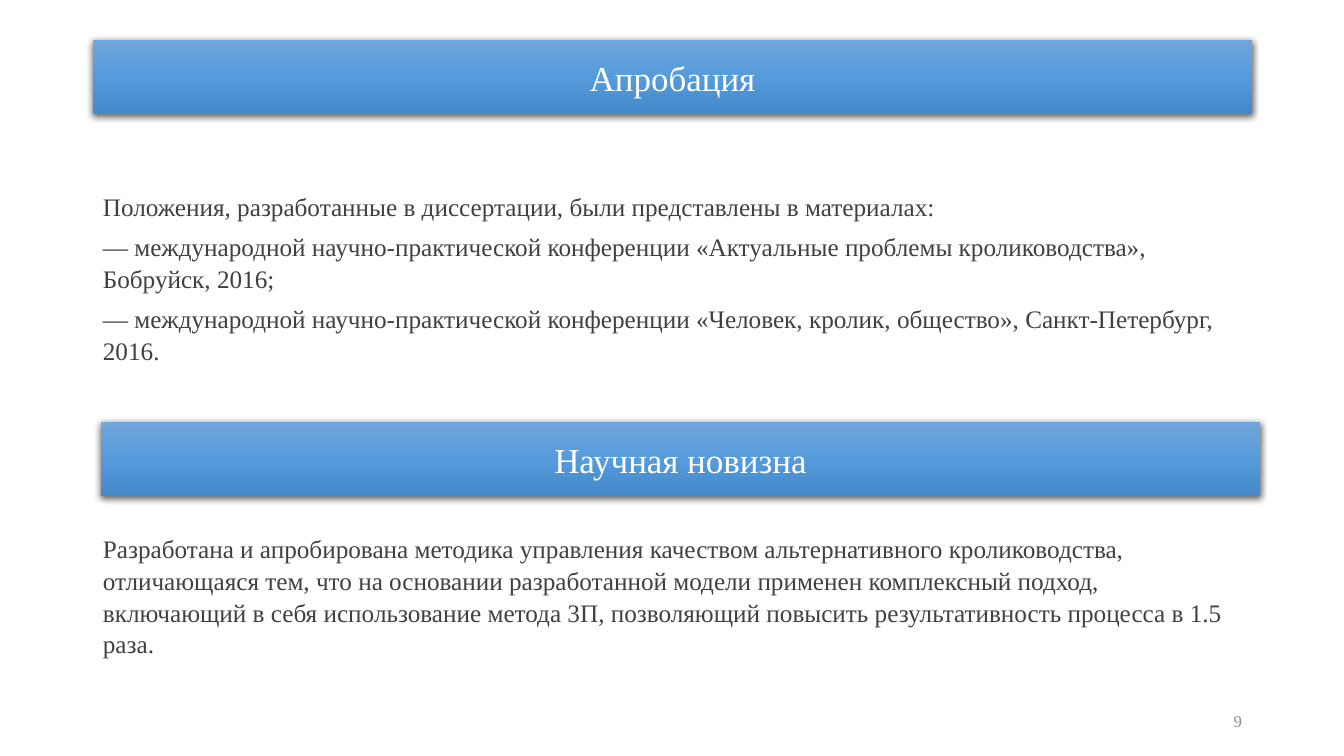
from pptx import Presentation
from pptx.dml.color import RGBColor
from pptx.enum.shapes import MSO_SHAPE
from pptx.enum.text import MSO_ANCHOR as ANCHOR, PP_ALIGN as ALIGN
from pptx.oxml import parse_xml
from pptx.oxml.ns import nsdecls, qn
from pptx.util import Emu, Pt

SLIDE_W, SLIDE_H = 1344, 756
EMU_PER_PX = 12192000 / SLIDE_W
LEFT, WIDTH = 93, 1159
BANNER_H = 74
FONT = "Times New Roman"

WHITE = RGBColor(0xFF, 0xFF, 0xFF)
TEXT_GREY = RGBColor(0x40, 0x40, 0x40)
NUMBER_GREY = RGBColor(0x8C, 0x8C, 0x8C)
BLACK = RGBColor(0x00, 0x00, 0x00)
BANNER_STOPS = [
    (0, RGBColor(0x71, 0xA6, 0xDB)),
    (50, RGBColor(0x55, 0x9B, 0xDB)),
    (100, RGBColor(0x44, 0x8A, 0xCA)),
]

APPROBATION = [
    "Положения, разработанные в диссертации, были представлены в материалах:",
    "— международной научно-практической конференции «Актуальные проблемы "
    "кролиководства», Бобруйск, 2016;",
    "— международной научно-практической конференции «Человек, кролик, общество», "
    "Санкт-Петербург, 2016.",
]
NOVELTY = [
    "Разработана и апробирована методика управления качеством альтернативного "
    "кролиководства, отличающаяся тем, что на основании разработанной модели применен "
    "комплексный подход, включающий в себя использование метода 3П, позволяющий "
    "повысить результативность процесса в 1.5 раза.",
]


def px(*lengths):
    return [Emu(round(n * EMU_PER_PX)) for n in lengths]


def write_text(sp, lines, size, color, align=ALIGN.LEFT, anchor=ANCHOR.TOP,
               spacing=1.0, after=0):
    tf = sp.text_frame
    tf.word_wrap = True
    tf.vertical_anchor = anchor
    tf.text = "\n".join(lines)
    for p in tf.paragraphs:
        p.alignment = align
        p.line_spacing = spacing
        p.space_after = Pt(after)
        for r in p.runs:
            r.font.name = FONT
            r.font.size = Pt(size)
            r.font.color.rgb = color


def add_text(slide, box, lines, size, color, **layout):
    sp = slide.shapes.add_textbox(*px(*box))
    write_text(sp, lines, size, color, **layout)


def style_banner(sp):
    stops = "".join(
        f'<a:gs pos="{pos * 1000}"><a:srgbClr val="{color}"/></a:gs>'
        for pos, color in BANNER_STOPS
    )
    gradient = parse_xml(
        f'<a:gradFill {nsdecls("a")} rotWithShape="1"><a:gsLst>{stops}</a:gsLst>'
        '<a:lin ang="5400000" scaled="0"/></a:gradFill>'
    )
    shadow = parse_xml(
        f'<a:outerShdw {nsdecls("a")} blurRad="{Pt(4.5)}" dist="{Pt(1.5)}" '
        f'dir="5400000" algn="ctr" rotWithShape="0"><a:srgbClr val="{BLACK}">'
        '<a:alpha val="63000"/></a:srgbClr></a:outerShdw>'
    )
    sp.line.fill.background()
    sp.shadow.inherit = False
    props = sp.element.spPr
    props.find(qn("a:prstGeom")).addnext(gradient)
    props.find(qn("a:effectLst")).append(shadow)


def add_banner(slide, left, top, title):
    sp = slide.shapes.add_shape(MSO_SHAPE.RECTANGLE, *px(left, top, WIDTH, BANNER_H))
    style_banner(sp)
    write_text(sp, [title], 25, WHITE, align=ALIGN.CENTER, anchor=ANCHOR.MIDDLE)


def main():
    prs = Presentation()
    prs.slide_width, prs.slide_height = px(SLIDE_W, SLIDE_H)
    slide = prs.slides.add_slide(prs.slide_layouts[6])

    add_banner(slide, LEFT, 40, "Апробация")
    add_text(slide, (LEFT, 185, WIDTH, 219), APPROBATION, 18, TEXT_GREY,
             spacing=1.05, after=6)
    add_banner(slide, 101, 422, "Научная новизна")
    add_text(slide, (LEFT, 527, WIDTH, 132), NOVELTY, 18, TEXT_GREY, spacing=1.05)
    add_text(slide, (950, 701, 302, 40), ["9"], 12, NUMBER_GREY,
             align=ALIGN.RIGHT, anchor=ANCHOR.MIDDLE)

    prs.save("out.pptx")


if __name__ == "__main__":
    main()
